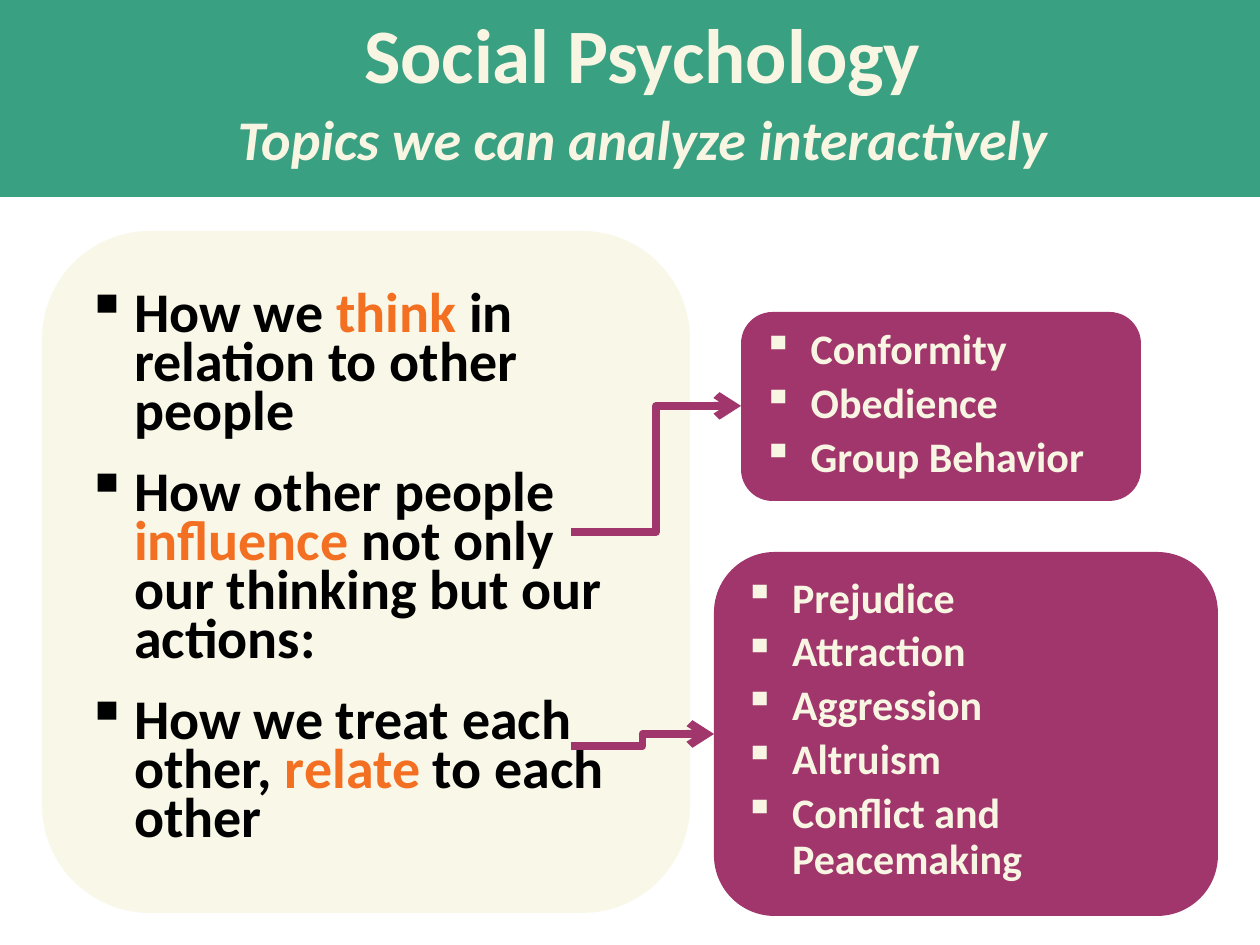
from dataclasses import dataclass
from lxml.etree import SubElement as Sub
from pptx import Presentation
from pptx.dml.color import RGBColor as Rgb
from pptx.enum.shapes import MSO_CONNECTOR as Link, MSO_SHAPE as Kind
from pptx.enum.text import MSO_ANCHOR as Anchor, PP_ALIGN as Align
from pptx.oxml.ns import qn
from pptx.util import Pt


@dataclass(frozen=True)
class Theme:
    font: str = "Calibri"
    green: str = "3AA082"
    cream: str = "F8F6E3"
    plum: str = "A0366C"
    orange: str = "F36F21"
    black: str = "000000"
    head: int = 44
    large: int = 32
    small: int = 24


T = Theme()
SCALE = 914400 / 126

TITLE = [[("Social Psychology", {"size": T.head})],
         [("Topics we can analyze interactively", {"italic": True})]]
KEY = {"color": T.orange}
POINTS = [
    [("How we ", {}), ("think", KEY), (" in relation to other people", {})],
    [("How other people ", {}), ("influence", KEY),
     (" not only our thinking but our actions:", {})],
    [("How we treat each other, ", {}), ("relate", KEY), (" to each other", {})],
]
CARDS = [
    {"box": (741, 312, 400, 189), "start": (571, 532),
     "items": ["Conformity", "Obedience", "Group Behavior"]},
    {"box": (714, 552, 504, 364), "start": (571, 746),
     "items": ["Prejudice", "Attraction", "Aggression", "Altruism",
               "Conflict and Peacemaking"]},
]


def px(*vals):
    return [round(v * SCALE) for v in vals]


def panel(slide, kind, box, color, alpha=None):
    shape = slide.shapes.add_shape(kind, *px(*box))
    shape.shadow.inherit = False
    shape.fill.solid()
    shape.fill.fore_color.rgb = Rgb.from_string(color)
    shape.line.fill.background()
    if alpha:
        tone = shape.fill._xPr.find(".//" + qn("a:srgbClr"))
        Sub(tone, qn("a:alpha"), val=str(alpha * 1000))
    return shape


def write(shape, text, size, color, lead, anchor=Anchor.MIDDLE,
          align=Align.LEFT, bullet=True, after=0):
    frame = shape.text_frame
    frame.word_wrap = True
    frame.vertical_anchor = anchor
    for num, runs in enumerate(text):
        para = frame.add_paragraph() if num else frame.paragraphs[0]
        para.alignment = align
        para.line_spacing = Pt(lead)
        para.space_after = Pt(after)
        para.space_before = Pt(size * 0.2 if bullet else 0)
        if bullet:
            props = para._p.get_or_add_pPr()
            indent = px(48)[0]
            props.set("marL", str(indent))
            props.set("indent", str(-indent))
            Sub(props, qn("a:buChar"), char="▪")
        for words, style in runs:
            run = para.add_run()
            run.text = words
            font = run.font
            font.name, font.bold = T.font, True
            font.size = Pt(style.get("size", size))
            font.italic = style.get("italic", False)
            font.color.rgb = Rgb.from_string(style.get("color", color))


def arrow(slide, start, end):
    line = slide.shapes.add_connector(Link.ELBOW, *px(*start, *end))
    line.line.color.rgb = Rgb.from_string(T.plum)
    line.line.width = Pt(4.5)
    Sub(line.line._get_or_add_ln(), qn("a:tailEnd"), type="arrow")
    Sub(line._element.spPr, qn("a:effectLst"))


def main():
    deck = Presentation()
    deck.slide_width, deck.slide_height = px(1260, 945)
    slide = deck.slides.add_slide(deck.slide_layouts[6])

    band = panel(slide, Kind.RECTANGLE, (0, 0, 1260, 197), T.green)
    band.text_frame.margin_left = px(38)[0]
    write(band, TITLE, T.large, T.cream, 42, align=Align.CENTER, bullet=False)

    main_box = panel(slide, Kind.ROUNDED_RECTANGLE, (42, 231, 648, 682),
                     T.cream, alpha=80)
    write(main_box, POINTS, T.large, T.black, 28, after=12)

    for card in CARDS:
        left, top, wide, high = card["box"]
        shape = panel(slide, Kind.ROUNDED_RECTANGLE, card["box"], T.plum)
        rows = [[(item, {})] for item in card["items"]]
        write(shape, rows, T.small, T.cream, 26, anchor=Anchor.TOP)
        arrow(slide, card["start"], (left, top + high // 2))

    deck.save("out.pptx")


if __name__ == "__main__":
    main()
